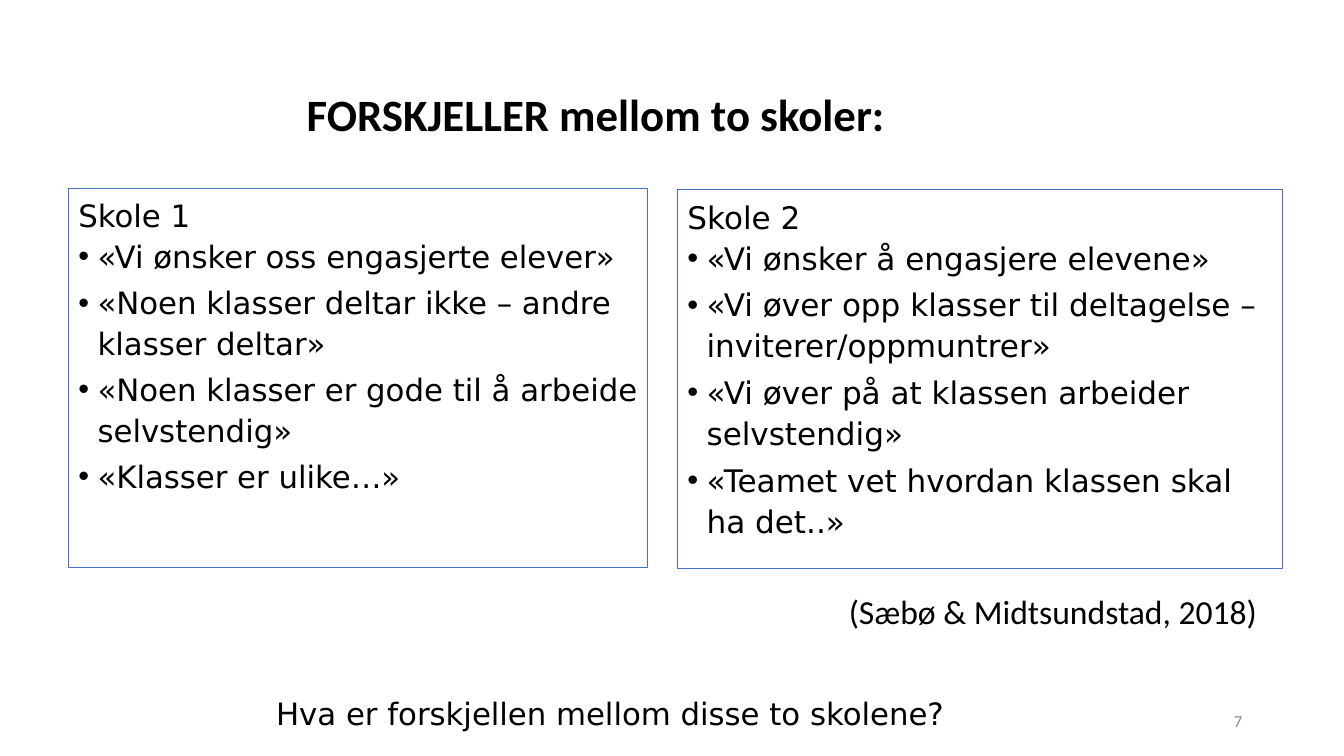
from pptx import Presentation
from pptx.dml.color import RGBColor
from pptx.enum.shapes import MSO_SHAPE as Shape
from pptx.enum.text import MSO_ANCHOR as Anchor, PP_ALIGN as Align
from pptx.oxml.ns import qn
from pptx.util import Inches, Pt
from lxml.etree import SubElement

COLORS = {"text": "000000", "border": "4472C4", "number": "8C8C8C"}
HEADING_FONT = "Calibri"
BODY_FONT = "DejaVu Sans"
INDENT = 0.19

TITLE = "FORSKJELLER mellom to skoler:"
QUESTION = "Hva er forskjellen mellom disse to skolene?"
CITATION = "(Sæbø & Midtsundstad, 2018)"
PAGE_NUMBER = "7"
SCHOOLS = [
    {
        "name": "Skole 1",
        "box": (0.68, 1.87, 5.74, 3.76),
        "size": 22,
        "quotes": [
            "«Vi ønsker oss engasjerte elever»",
            "«Noen klasser deltar ikke – andre klasser deltar»",
            "«Noen klasser er gode til å arbeide selvstendig»",
            "«Klasser er ulike…»",
        ],
    },
    {
        "name": "Skole 2",
        "box": (6.72, 1.88, 6, 3.76),
        "size": 22.2,
        "quotes": [
            "«Vi ønsker å engasjere elevene»",
            "«Vi øver opp klasser til deltagelse – inviterer/oppmuntrer»",
            "«Vi øver på at klassen arbeider selvstendig»",
            "«Teamet vet hvordan klassen skal ha det..»",
        ],
    },
]


def color(name):
    return RGBColor.from_string(COLORS[name])


def write(paragraph, text, size, font, align=Align.LEFT, spacing=1.0, fill="text", bold=False):
    paragraph.text = text
    paragraph.alignment = align
    paragraph.line_spacing = spacing
    paragraph.font.size = Pt(size)
    paragraph.font.name = font
    paragraph.font.bold = bold
    paragraph.font.color.rgb = color(fill)


def add_text(slide, box, text, size, font, anchor=Anchor.TOP, **style):
    frame = slide.shapes.add_textbox(*map(Inches, box)).text_frame
    frame.word_wrap = True
    frame.vertical_anchor = anchor
    write(frame.paragraphs[0], text, size, font, **style)


def add_bullet(paragraph):
    properties = paragraph._p.get_or_add_pPr()
    properties.set("marL", str(Inches(INDENT)))
    properties.set("indent", str(-Inches(INDENT)))
    SubElement(properties, qn("a:buFont")).set("typeface", "Arial")
    SubElement(properties, qn("a:buChar")).set("char", "•")


def add_school(slide, school):
    shape = slide.shapes.add_shape(Shape.RECTANGLE, *map(Inches, school["box"]))
    shape.shadow.inherit = False
    shape.fill.background()
    shape.line.color.rgb = color("border")
    shape.line.width = Pt(0.75)
    frame = shape.text_frame
    frame.word_wrap = True
    frame.vertical_anchor = Anchor.TOP
    write(frame.paragraphs[0], school["name"], school["size"], BODY_FONT, spacing=1.1)
    for index, quote in enumerate(school["quotes"]):
        paragraph = frame.add_paragraph()
        write(paragraph, quote, school["size"], BODY_FONT, spacing=1.1)
        paragraph.space_before = Pt(4 if index else 0)
        add_bullet(paragraph)


def main():
    presentation = Presentation()
    presentation.slide_width = Inches(13.33)
    presentation.slide_height = Inches(7.5)
    slide = presentation.slides.add_slide(presentation.slide_layouts[6])

    add_text(slide, (2.64, 6.88, 12.62, 0.44), QUESTION, 22, BODY_FONT, spacing=0.9)
    add_text(slide, (0.16, 0.55, 11.5, 1.22), TITLE, 32, HEADING_FONT,
             anchor=Anchor.MIDDLE, align=Align.CENTER, spacing=0.9, bold=True)
    for school in SCHOOLS:
        add_school(slide, school)
    add_text(slide, (9.42, 6.95, 3, 0.4), PAGE_NUMBER, 12, HEADING_FONT,
             anchor=Anchor.MIDDLE, align=Align.RIGHT, fill="number")
    add_text(slide, (8.32, 5.81, 4.4, 0.5), CITATION, 24, HEADING_FONT)

    presentation.save("out.pptx")


if __name__ == "__main__":
    main()
